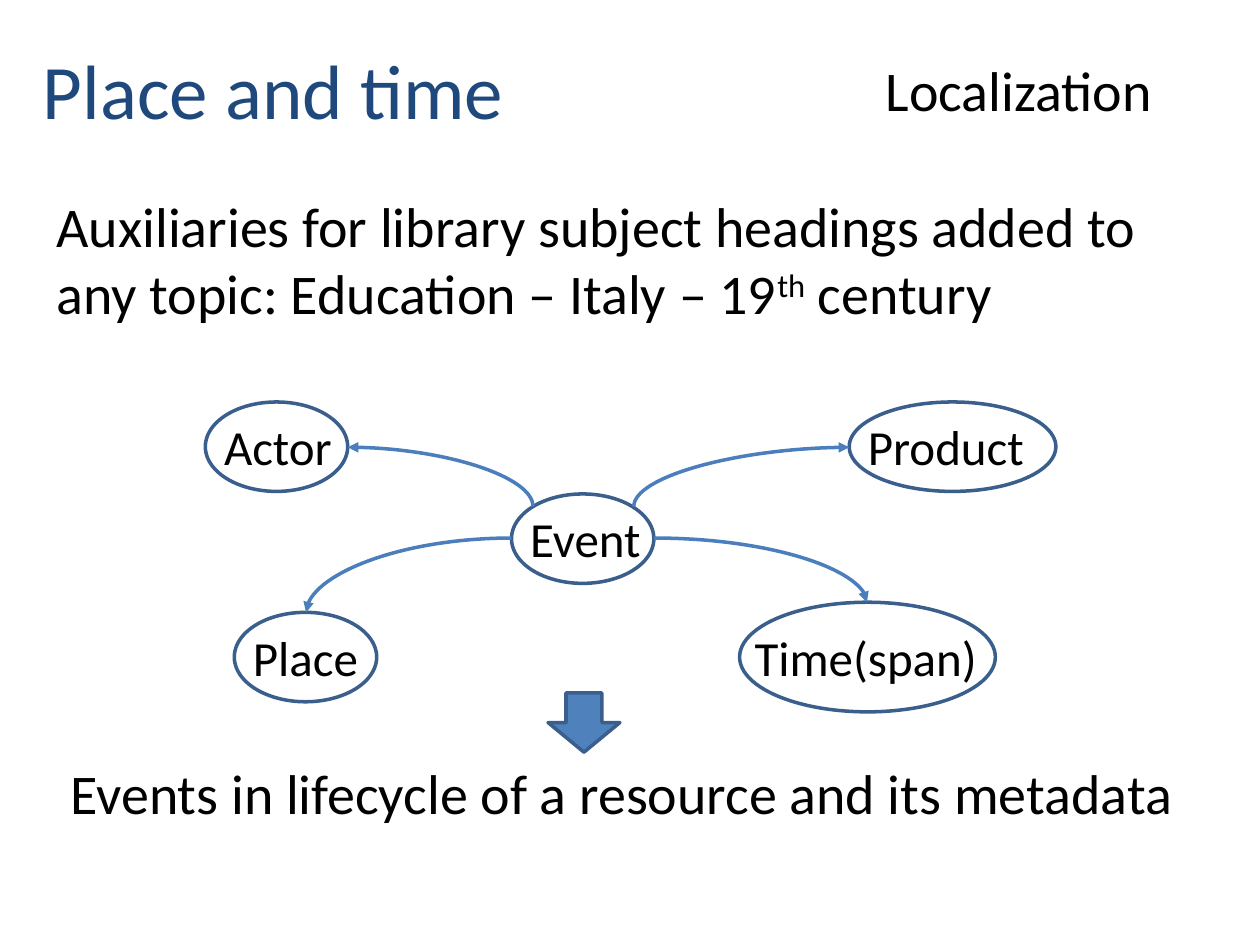
from pptx import Presentation
from pptx.dml.color import RGBColor
from pptx.enum.shapes import MSO_CONNECTOR, MSO_SHAPE
from pptx.enum.text import MSO_ANCHOR, MSO_AUTO_SIZE, PP_ALIGN
from pptx.oxml.ns import qn
from pptx.util import Inches, Pt
from lxml import etree

CURVE = MSO_CONNECTOR.CURVE
OVAL, ARROW = MSO_SHAPE.OVAL, MSO_SHAPE.DOWN_ARROW
TOP, LEFT = MSO_ANCHOR.TOP, PP_ALIGN.LEFT
GROW = MSO_AUTO_SIZE.SHAPE_TO_FIT_TEXT
FONT = "Calibri"
HUE = {"title": "1F497D", "text": "000000", "edge": "3A5F8C",
       "link": "4B7EBC", "fill": "4F81BD"}

TITLE = ("Place and time", (0.24, 0.29, 3.9, 0.84))
NOTES = [
    ([("Auxiliaries for library subject headings added to any topic: "
       "Education – Italy – 19", 0), ("th", 30), (" century", 0)],
     (0.35, 1.47, 8.9, 1.18), True),
    ([("Events in lifecycle of a resource and its metadata", 0)],
     (0.46, 5.97, 9.08, 0.64), True),
    ([("Localization", 0)], (6.93, 0.39, 2.34, 0.64), False),
]
NODES = [
    ("Event", (4.06, 3.92, 1.13, 0.71), 0.05, 1.09),
    ("Place", (1.86, 4.86, 1.13, 0.71), 0.05, 1.04),
    ("Time(span)", (5.87, 4.78, 2.03, 0.87), 0.02, 1.98),
    ("Actor", (1.63, 3.19, 1.13, 0.71), 0.05, 1.07),
    ("Product", (6.74, 3.19, 1.64, 0.71), 0.05, 1.45),
]
LINKS = [
    ((5.19, 4.27), (6.88, 4.78), False),
    ((4.06, 4.27), (2.43, 4.86), False),
    ((4.23, 4.02), (2.76, 3.55), True),
    ((5.03, 4.02), (6.74, 3.55), True),
]
DOWN = (4.35, 5.5, 0.57, 0.47)
LABEL = 0.57


def span(box):
    return [Inches(v) for v in box]


def style(frame, size, hue, wrap):
    frame.word_wrap = wrap
    frame.auto_size = GROW
    frame.vertical_anchor = TOP
    for para in frame.paragraphs:
        para.alignment = LEFT
        for run in para.runs:
            run.font.name = FONT
            run.font.size = Pt(size)
            run.font.color.rgb = RGBColor.from_string(HUE[hue])


def write(slide, runs, box, size, wrap):
    frame = slide.shapes.add_textbox(*span(box)).text_frame
    for text, lift in runs:
        run = frame.paragraphs[0].add_run()
        run.text = text
        if lift:
            run._r.get_or_add_rPr().set("baseline", str(lift * 1000))
    style(frame, size, "text", wrap)


def draw(slide, kind, box, fill=None):
    shape = slide.shapes.add_shape(kind, *span(box))
    shape.shadow.inherit = False
    if fill:
        shape.fill.solid()
        shape.fill.fore_color.rgb = RGBColor.from_string(HUE[fill])
    else:
        shape.fill.background()
    shape.line.color.rgb = RGBColor.from_string(HUE["edge"])
    shape.line.width = Pt(2)


def link(slide, start, end, rise):
    (x1, y1), (x2, y2) = start, end
    if rise:
        mid_x, mid_y = (x1 + x2) / 2, (y1 + y2) / 2
        wide, tall = y1 - y2, x2 - x1
        x1, x2 = mid_x - wide / 2, mid_x + wide / 2
        y1, y2 = mid_y - tall / 2, mid_y + tall / 2
    line = slide.shapes.add_connector(CURVE, *span((x1, y1, x2, y2)))
    line.line.color.rgb = RGBColor.from_string(HUE["link"])
    line.line.width = Pt(2)
    props = line._element.spPr
    props.find(qn("a:prstGeom")).set("prst", "curvedConnector2")
    if rise:
        props.find(qn("a:xfrm")).set("rot", str(270 * 60000))
    etree.SubElement(props.find(qn("a:ln")), qn("a:tailEnd"), type="triangle")
    etree.SubElement(props, qn("a:effectLst"))


def main():
    deck = Presentation()
    deck.slide_width, deck.slide_height = Inches(10), Inches(7.5)
    slide = deck.slides.add_slide(deck.slide_layouts[5])

    title = slide.shapes.title
    text, box = TITLE
    title.left, title.top, title.width, title.height = span(box)
    title.text_frame.text = text
    style(title.text_frame, 44, "title", False)

    for text, box, inset, width in NODES:
        draw(slide, OVAL, box)
        x, y, _, tall = box
        place = (x + inset, y + (tall - LABEL) / 2, width, LABEL)
        write(slide, [(text, 0)], place, 28, False)
    for start, end, rise in LINKS:
        link(slide, start, end, rise)
    draw(slide, ARROW, DOWN, "fill")
    for runs, box, wrap in NOTES:
        write(slide, runs, box, 32, wrap)

    deck.save("out.pptx")


if __name__ == "__main__":
    main()
